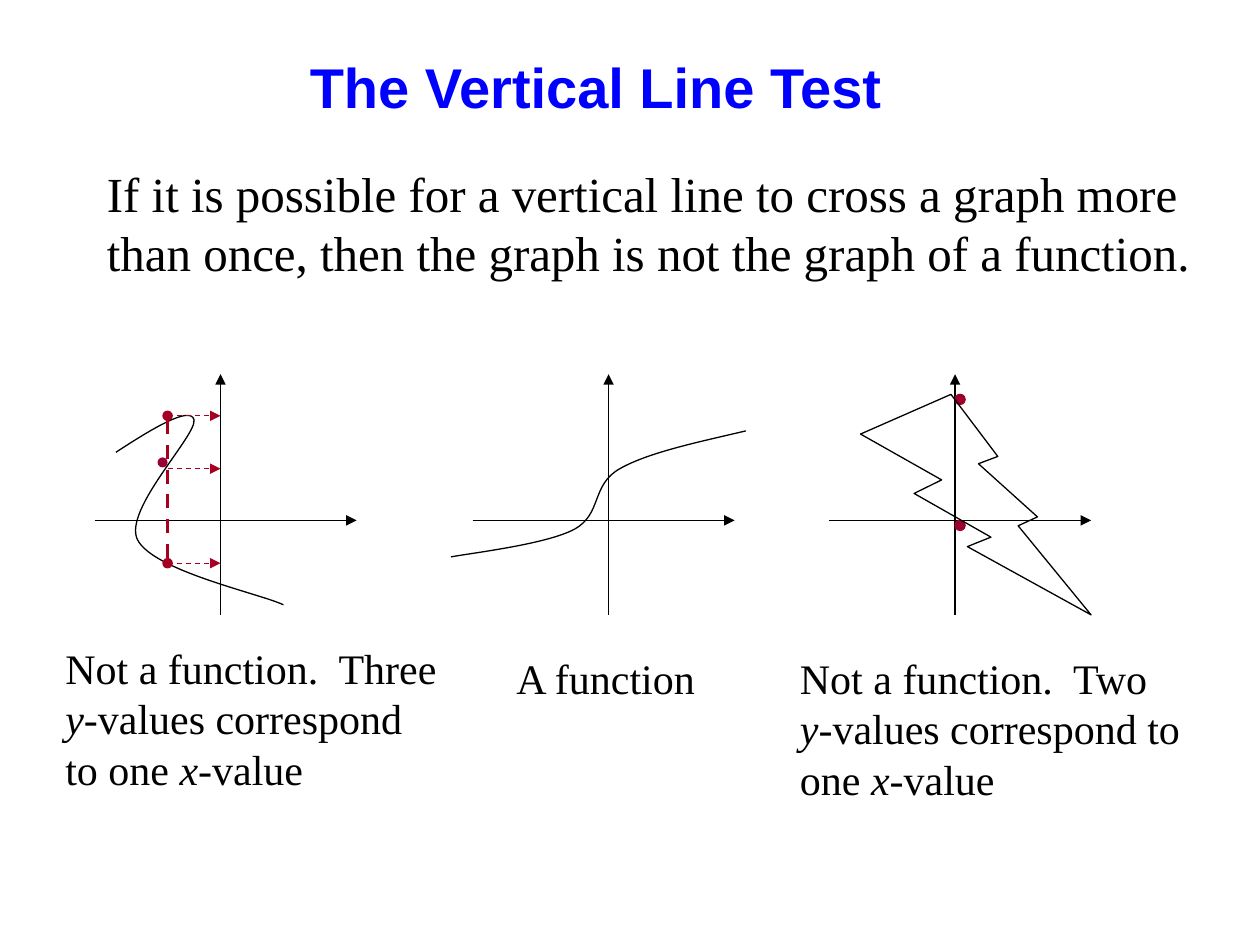
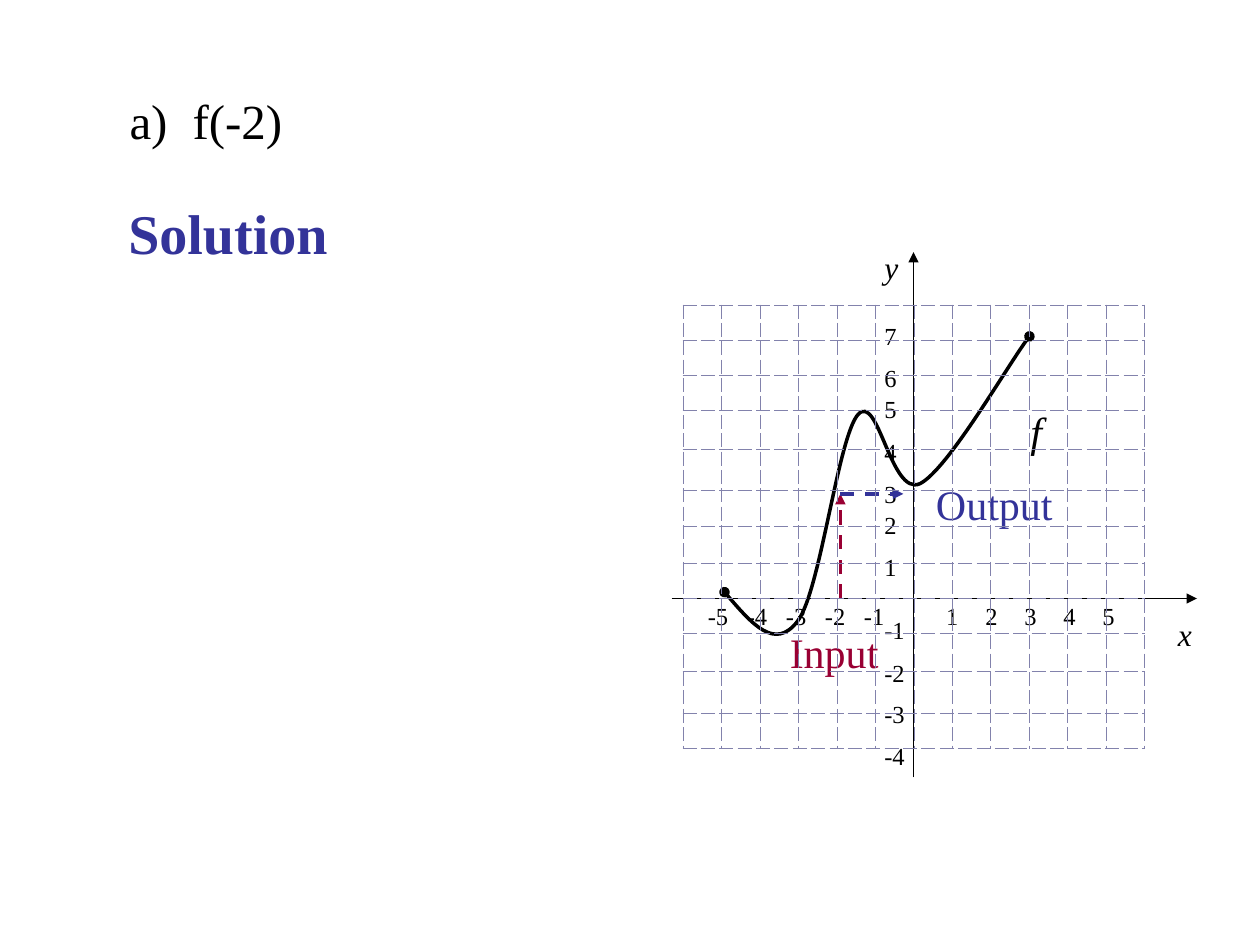
from lxml import etree
from pptx import Presentation
from pptx.dml.color import RGBColor
from pptx.enum.dml import MSO_LINE
from pptx.enum.shapes import MSO_CONNECTOR, MSO_SHAPE
from pptx.enum.text import MSO_AUTO_SIZE, PP_ALIGN
from pptx.oxml.ns import qn
from pptx.util import Inches, Pt

DASH = MSO_LINE.DASH
STRAIGHT = MSO_CONNECTOR.STRAIGHT
OVAL = MSO_SHAPE.OVAL
BOLT = MSO_SHAPE.LIGHTNING_BOLT
LEFT, CENTER = PP_ALIGN.LEFT, PP_ALIGN.CENTER
GROW, FIXED = MSO_AUTO_SIZE.SHAPE_TO_FIT_TEXT, MSO_AUTO_SIZE.NONE
SERIF, SANS = "Times New Roman", "Arial"
COLORS = {
    "black": "000000", "title": "0000FF", "navy": "333399",
    "wine": "990033", "crimson": "A50021", "grid": "8282AC",
}


class SlideBuilder:
    def __init__(self, deck):
        self.deck = deck
        self.page = None

    def new_page(self):
        self.page = self.deck.slides.add_slide(self.deck.slide_layouts[6])

    def color(self, name):
        return RGBColor.from_string(COLORS[name])

    def text(self, place, spans, size, color="black", font=SERIF, bold=False,
             italic=False, align=LEFT, wrap=True):
        box = self.page.shapes.add_textbox(*map(Inches, place))
        frame = box.text_frame
        frame.word_wrap = wrap
        frame.auto_size = GROW if wrap else FIXED
        para = frame.paragraphs[0]
        para.alignment = align
        para.font.name, para.font.size = font, Pt(size)
        para.font.bold = bold
        para.font.color.rgb = self.color(color)
        if isinstance(spans, str):
            para.font.italic = italic
            spans = [(spans, None)]
        for words, slanted in spans:
            span = para.add_run()
            span.text = words
            if slanted is not None:
                span.font.italic = slanted
        return para

    def stroke(self, shape, color, width, dashed=False, head=None, tail=None):
        shape.line.color.rgb = self.color(color)
        shape.line.width = Pt(width)
        if dashed:
            shape.line.dash_style = DASH
        outline = shape.line._get_or_add_ln()
        for tag, kind in (("a:headEnd", head), ("a:tailEnd", tail)):
            if kind:
                etree.SubElement(outline, qn(tag), type=kind)

    def line(self, start, end, color="black", width=0.75, dashed=False,
             head=None, tail="triangle"):
        connector = self.page.shapes.add_connector(
            STRAIGHT, *map(Inches, (*start, *end)))
        self.stroke(connector, color, width, dashed, head, tail)
        etree.SubElement(connector._element.spPr, qn("a:effectLst"))

    def shape(self, kind, place, fill=None, outline=None):
        shape = self.page.shapes.add_shape(kind, *map(Inches, place))
        shape.shadow.inherit = False
        if fill:
            shape.fill.solid()
            shape.fill.fore_color.rgb = self.color(fill)
        else:
            shape.fill.background()
        if outline:
            self.stroke(shape, outline, 0.75)
        else:
            shape.line.fill.background()

    def curve(self, points, width=0.75, ends=None):
        start, *rest = [(Inches(x), Inches(y)) for x, y in points]
        builder = self.page.shapes.build_freeform(*start, scale=1.0)
        builder.add_line_segments(rest, close=False)
        curve = builder.convert_to_shape()
        curve.shadow.inherit = False
        curve.fill.background()
        self.stroke(curve, "black", width, head=ends, tail=ends)
        segments = list(curve._element.iter(qn("a:lnTo")))
        for trio in zip(*[iter(segments)] * 3):
            bezier = etree.Element(qn("a:cubicBezTo"))
            trio[0].addprevious(bezier)
            for segment in trio:
                bezier.append(segment[0])
                segment.getparent().remove(segment)

    def grid(self, place, column_count, row_heights):
        table = self.page.shapes.add_table(
            len(row_heights), column_count, *map(Inches, place)).table
        table.first_row = table.horz_banding = False
        for column in table.columns:
            column.width = Inches(place[2] / column_count)
        for row, height in zip(table.rows, row_heights):
            row.height = Inches(height)
        for cell in table.iter_cells():
            cell.margin_left = cell.margin_right = 0
            cell.margin_top = cell.margin_bottom = 0
            cell.fill.background()
            para = cell.text_frame.paragraphs[0]
            etree.SubElement(para._p, qn("a:endParaRPr"), sz="800")
            self.cell_borders(cell._tc.get_or_add_tcPr())

    def cell_borders(self, properties):
        for index, side in enumerate("LRTB"):
            border = etree.Element(qn(f"a:ln{side}"), w=str(Pt(0.5)))
            fill = etree.SubElement(border, qn("a:solidFill"))
            etree.SubElement(fill, qn("a:srgbClr"), val=COLORS["grid"])
            etree.SubElement(border, qn("a:prstDash"), val="sysDash")
            properties.insert(index, border)


def vertical_line_test(slide):
    slide.new_page()
    slide.text((0.75, 1.25, 8.92, 1.04),
               "If it is possible for a vertical line to cross a graph more "
               "than once, then the graph is not the graph of a function.", 28)
    slide.text((2, 0.37, 5.46, 0.5), "The Vertical Line Test", 32, "title",
               SANS, bold=True, align=CENTER, wrap=False)

    for axis_left, axis_x in ((0.75, 1.75), (3.75, 4.83), (6.58, 7.58)):
        slide.line((axis_left, 4.13), (axis_left + 2.08, 4.13))
        slide.line((axis_x, 4.88), (axis_x, 2.97))

    slide.curve([(0.92, 3.59), (1.21, 3.4), (1.51, 3.22), (1.54, 3.33),
                 (1.57, 3.45), (0.98, 4.04), (1.09, 4.28),
                 (1.21, 4.53), (2.06, 4.71), (2.25, 4.8)])
    slide.curve([(5.92, 3.42), (5.54, 3.51), (5.15, 3.59), (4.92, 3.72),
                 (4.69, 3.85), (4.78, 4.08), (4.56, 4.2),
                 (4.34, 4.32), (3.74, 4.39), (3.58, 4.42)])

    slide.shape(OVAL, (1.25, 3.63, 0.08, 0.08), "wine")
    for dot_top in (3.13, 4.13):
        slide.shape(OVAL, (7.58, dot_top, 0.08, 0.08), "wine", "crimson")

    slide.text((4, 5.13, 2.08, 0.5), "A function", 24)
    for place, count in (((6.25, 5.13, 3.25, 1.3), "Two"),
                         ((0.42, 5.05, 3.17, 1.3), "Three")):
        slide.text(place, [(f"Not a function.  {count} ", False), ("y", True),
                           ("-values correspond to one ", False),
                           ("x", True), ("-value", False)], 24)

    slide.line((1.33, 3.3), (1.33, 4.47), "crimson", 2, True, "oval", "oval")
    for value_y in (4.47, 3.72, 3.3):
        slide.line((1.33, value_y), (1.75, value_y), "crimson", dashed=True)
    slide.shape(BOLT, (6.83, 3.13, 1.83, 1.75), outline="black")


def axis_numbers(slide):
    numbers = [*range(-5, 0), *range(1, 6)]
    para = slide.text((5.33, 4.72, 3.92, 0.33),
                      "".join(f"\t{number}" for number in numbers), 14)
    tabs = etree.Element(qn("a:tabLst"))
    for number in numbers:
        etree.SubElement(tabs, qn("a:tab"), algn="ctr",
                         pos=str(Inches(1.82 + 0.31 * number)))
    para._p.pPr.find(qn("a:defRPr")).addprevious(tabs)

    tops = {7: 2.5, 6: 2.83, 5: 3.08, 4: 3.42, 3: 3.75, 2: 4, 1: 4.33,
            -1: 4.83, -2: 5.17, -3: 5.5, -4: 5.83}
    for number, top in tops.items():
        slide.text((6.92, top, 0.5, 0.33), str(number), 14)


def function_value(slide):
    slide.new_page()
    question = slide.text((0.93, 0.67, 8.57, 0.57), "a)\tf(-2)", 28)
    properties = question._p.get_or_add_pPr()
    properties.set("marL", str(Inches(0.5)))
    properties.set("indent", str(-Inches(0.5)))
    slide.text((0.92, 1.53, 1.92, 0.63), "Solution", 32, "navy", bold=True)

    slide.line((5.33, 4.75), (9.5, 4.75))
    slide.line((7.25, 6.17), (7.25, 2))
    slide.text((9.25, 4.83, 0.33, 0.4), "x", 18, italic=True)
    slide.text((6.92, 1.92, 0.33, 0.4), "y", 18, italic=True)
    slide.text((8.08, 3.17, 0.58, 0.5), "f", 24, italic=True)
    axis_numbers(slide)

    slide.curve([(5.75, 4.7), (5.95, 4.93), (6.15, 5.17), (6.33, 4.93),
                 (6.51, 4.7), (6.65, 3.47), (6.81, 3.29),
                 (6.97, 3.11), (7.07, 3.94), (7.3, 3.84),
                 (7.52, 3.73), (8.02, 2.86), (8.17, 2.67)], 2, "oval")

    slide.text((6.17, 4.92, 1, 0.5), "Input", 24, "wine")
    slide.text((7.33, 3.75, 1.17, 0.5), "Output", 24, "navy")
    slide.line((6.67, 4.75), (6.67, 3.92), "wine", 2, True)
    slide.line((6.67, 3.92), (7.17, 3.92), "navy", 2, True)
    slide.grid((5.42, 2.42, 3.67, 3.55), 12,
               (0.28, 0.28, 0.28, 0.31, 0.32, 0.29,
                0.29, 0.28, 0.28, 0.3, 0.33, 0.28))


def main():
    deck = Presentation()
    deck.slide_width, deck.slide_height = Inches(10), Inches(7.5)
    slide = SlideBuilder(deck)
    vertical_line_test(slide)
    function_value(slide)
    deck.save("out.pptx")


if __name__ == "__main__":
    main()
